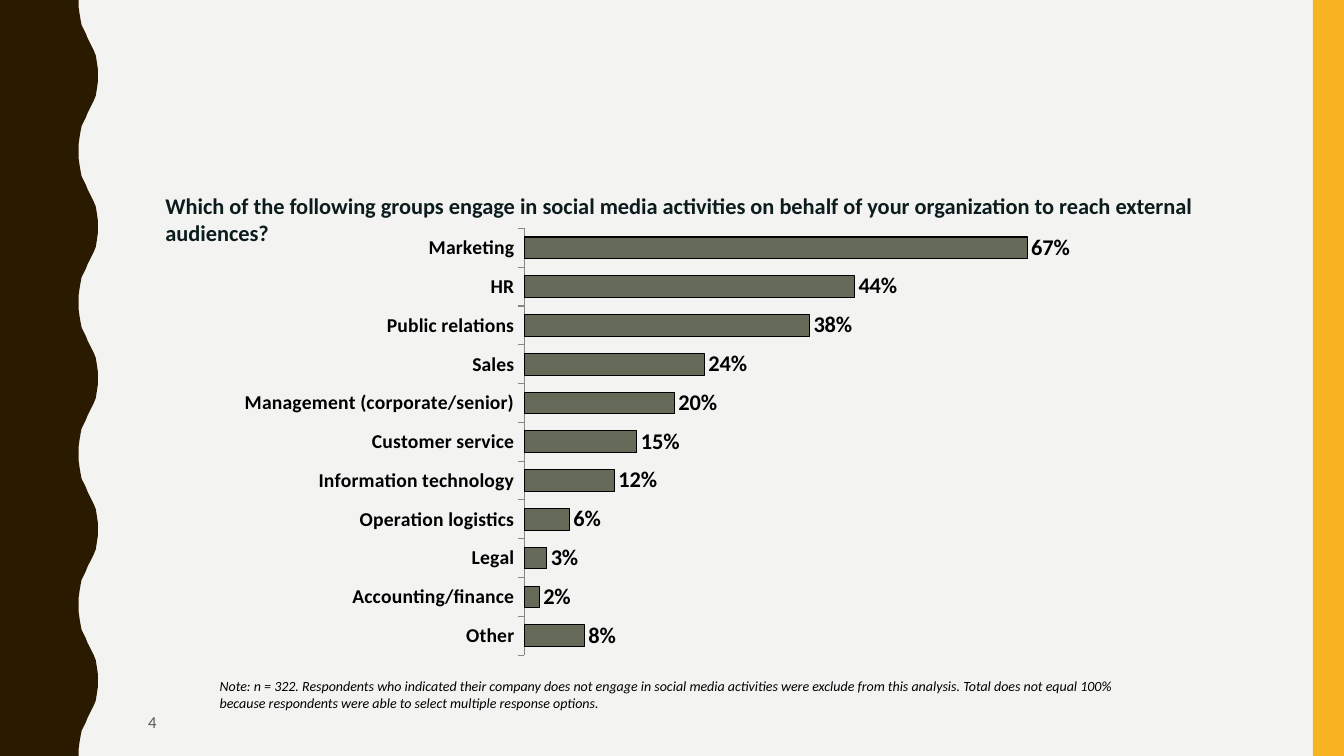
from lxml import etree
from pptx import Presentation, util as u
from pptx.chart.data import CategoryChartData
from pptx.dml.color import RGBColor
from pptx.enum import chart as charts, shapes, text
from pptx.oxml.ns import qn

PX = 9144  # EMU in one px, at 100 px to the inch
WIDTH, HEIGHT = 1333, 750
FONT = "Calibri"
COLOURS = {
    "background": "F3F3F2",
    "wave": "2A1A00",
    "stripe": "F8B323",
    "bar": "656A59",
    "axis": "868686",
    "title": "0C1C1D",
    "number": "595959",
    "black": "000000",
}
GROUPS = {
    "Other": 0.08,
    "Accounting/finance": 0.02,
    "Legal": 0.03,
    "Operation logistics": 0.06,
    "Information technology": 0.12,
    "Customer service": 0.15,
    "Management (corporate/senior)": 0.2,
    "Sales": 0.24,
    "Public relations": 0.38,
    "HR": 0.44,
    "Marketing": 0.67,
}
PLOT_AREA = {"x": 0.325, "y": 0.022, "w": 0.656, "h": 0.96}
WAVE_PERIOD = 150
WAVE_RISE = [(78, 0), (78, 7), (79, 14), (80, 20), (81, 25), (83, 29), (85, 33), (87, 38),
             (89, 42), (91, 46), (93, 50), (95, 55), (96, 61), (97, 68), (97, 75)]


def colour(name):
    return RGBColor.from_string(COLOURS[name])


def format_font(font, size, color="black", bold=False, italic=False):
    font.name = FONT
    font.size = u.Pt(size)
    font.bold = bold
    font.italic = italic
    font.color.rgb = colour(color)


def write_text(shape, words, anchor=text.MSO_ANCHOR.TOP, **font_format):
    frame = shape.text_frame
    frame.word_wrap = True
    frame.auto_size = text.MSO_AUTO_SIZE.NONE
    frame.vertical_anchor = anchor
    paragraph = frame.paragraphs[0]
    paragraph.alignment = text.PP_ALIGN.LEFT
    run = paragraph.add_run()
    run.text = words
    format_font(run.font, **font_format)


def set_plot_area(chart):
    """Fix the inner plot area as fractions of the chart."""
    plot_area = chart.plots[0]._element.getparent()
    for old in plot_area.findall(qn("c:layout")):
        plot_area.remove(old)
    layout = etree.Element(qn("c:layout"))
    manual = etree.SubElement(layout, qn("c:manualLayout"))
    etree.SubElement(manual, qn("c:layoutTarget"), val="inner")
    for side in "xy":
        etree.SubElement(manual, qn(f"c:{side}Mode"), val="edge")
    for side, share in PLOT_AREA.items():
        etree.SubElement(manual, qn(f"c:{side}"), val=str(share))
    plot_area.insert(0, layout)


class SlideBuilder:
    def __init__(self, presentation):
        self.slide = presentation.slides.add_slide(presentation.slide_layouts[5])
        background = self.slide.background.fill
        background.solid()
        background.fore_color.rgb = colour("background")

    def box(self, left, top, width, height):
        return [value * PX for value in (left, top, width, height)]

    def paint(self, shape, fill):
        shape.shadow.inherit = False
        shape.fill.solid()
        shape.fill.fore_color.rgb = colour(fill)
        shape.line.fill.background()

    def rectangle(self, *box, fill):
        shape = self.slide.shapes.add_shape(shapes.MSO_SHAPE.RECTANGLE, *self.box(*box))
        self.paint(shape, fill)

    def wavy_edge(self, fill):
        fall = [(x, WAVE_PERIOD - y) for x, y in reversed(WAVE_RISE[:-1])]
        points = [(x, y + top) for top in range(0, HEIGHT, WAVE_PERIOD)
                  for x, y in WAVE_RISE + fall]
        builder = self.slide.shapes.build_freeform(0, 0, scale=PX)
        builder.add_line_segments(points + [(0, HEIGHT)], close=True)
        self.paint(builder.convert_to_shape(), fill)

    def title(self, words, *box, **text_format):
        shape = self.slide.shapes.title
        shape.left, shape.top, shape.width, shape.height = self.box(*box)
        write_text(shape, words, **text_format)

    def text_box(self, words, *box, **text_format):
        write_text(self.slide.shapes.add_textbox(*self.box(*box)), words, **text_format)

    def bar_chart(self, values, *box):
        data = CategoryChartData(number_format="0%")
        data.categories = values.keys()
        data.add_series("Series 1", values.values())
        chart = self.slide.shapes.add_chart(
            charts.XL_CHART_TYPE.BAR_CLUSTERED, *self.box(*box), data).chart
        chart.has_legend = False
        chart.has_title = False
        format_font(chart.font, 18)

        category_axis = chart.category_axis
        category_axis.major_tick_mark = charts.XL_TICK_MARK.OUTSIDE
        category_axis.format.line.color.rgb = colour("axis")
        category_axis.format.line.width = u.Pt(0.75)
        format_font(category_axis.tick_labels.font, 14, bold=True)
        value_axis = chart.value_axis
        value_axis.minimum_scale, value_axis.maximum_scale = 0, 0.8
        value_axis.has_major_gridlines = False
        value_axis.visible = False

        plot = chart.plots[0]
        plot.gap_width = 79
        plot.vary_by_categories = False
        plot.has_data_labels = True
        labels = plot.data_labels
        labels.show_value = True
        labels.number_format = "0%"
        labels.number_format_is_linked = False
        labels.position = charts.XL_LABEL_POSITION.OUTSIDE_END
        format_font(labels.font, 16, bold=True)
        bars = plot.series[0].format
        bars.fill.solid()
        bars.fill.fore_color.rgb = colour("bar")
        bars.line.color.rgb = colour("black")
        bars.line.width = u.Pt(0.75)
        set_plot_area(chart)


def main():
    presentation = Presentation()
    presentation.slide_width, presentation.slide_height = WIDTH * PX, HEIGHT * PX
    builder = SlideBuilder(presentation)
    middle = text.MSO_ANCHOR.MIDDLE
    builder.wavy_edge("wave")
    builder.rectangle(1302, 0, 31, HEIGHT, fill="stripe")
    builder.bar_chart(GROUPS, 225, 217, 908, 441)
    builder.text_box("4", 137, 697, 255, 38, anchor=middle, size=12, color="number")
    builder.title(
        "Which of the following groups engage in social media activities on behalf of "
        "your organization to reach external audiences?",
        154, 136, 1113, 163, anchor=middle, size=16, color="title", bold=True)
    builder.text_box(
        "Note: n = 322. Respondents who indicated their company does not engage in social "
        "media activities were exclude from this analysis. Total does not equal 100% "
        "because respondents were able to select multiple response options.",
        208, 667, 908, 57, size=10, italic=True)
    presentation.save("out.pptx")


if __name__ == "__main__":
    main()
